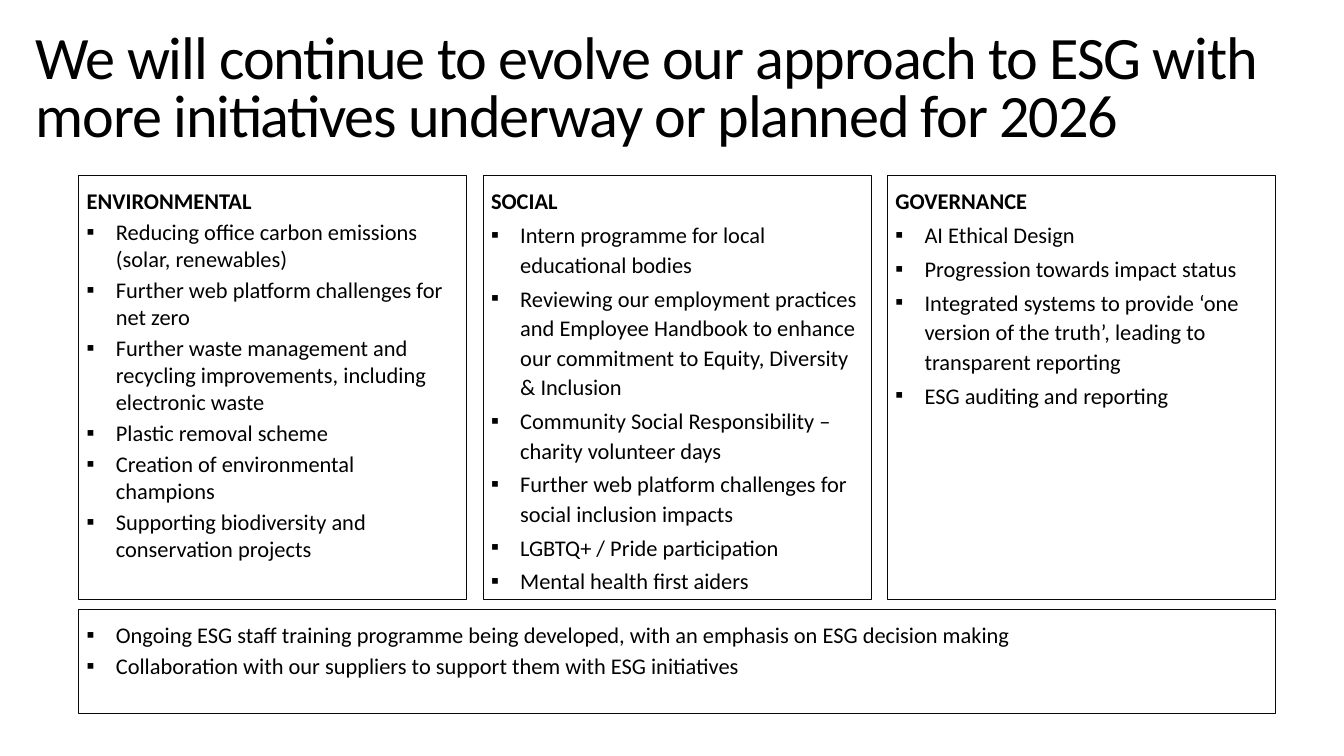
import pptx
import pptx.dml.color
import pptx.enum.shapes
import pptx.enum.text
import pptx.oxml
import pptx.oxml.ns
import pptx.util

Cm = pptx.util.Cm
Pt = pptx.util.Pt
RGBColor = pptx.dml.color.RGBColor

BLACK = RGBColor(0x00, 0x00, 0x00)
OUTLINE = RGBColor(0x08, 0x08, 0x08)
WHITE = RGBColor(0xFF, 0xFF, 0xFF)

SLIDE_WIDTH, SLIDE_HEIGHT = 67.74, 38.1
LEFT, COLUMN_TOP = 3.96, 8.84
COLUMN_WIDTH, COLUMN_HEIGHT, COLUMN_GAP = 19.56, 21.36, 0.82
FOOTER_TOP, FOOTER_HEIGHT = 30.71, 5.26

TITLE = ("We will continue to evolve our approach to ESG with "
         "more initiatives underway or planned for 2026")

COLUMNS = [
    ("ENVIRONMENTAL", None, [
        "Reducing office carbon emissions (solar, renewables)",
        "Further web platform challenges for net zero",
        "Further waste management and recycling improvements, including electronic waste",
        "Plastic removal scheme",
        "Creation of environmental champions",
        "Supporting biodiversity and conservation projects",
    ]),
    ("SOCIAL", 1.1, [
        "Intern programme for local educational bodies",
        "Reviewing our employment practices and Employee Handbook to enhance "
        "our commitment to Equity, Diversity & Inclusion",
        "Community Social Responsibility – charity volunteer days",
        "Further web platform challenges for social inclusion impacts",
        "LGBTQ+ / Pride participation",
        "Mental health first aiders",
    ]),
    ("GOVERNANCE", 1.1, [
        "AI Ethical Design",
        "Progression towards impact status",
        "Integrated systems to provide ‘one version of the truth’, "
        "leading to transparent reporting",
        "ESG auditing and reporting",
    ]),
]

SHARED_INITIATIVES = [
    "Ongoing ESG staff training programme being developed, "
    "with an emphasis on ESG decision making",
    "Collaboration with our suppliers to support them with ESG initiatives",
]


class SlideBuilder:
    font_name = "Calibri"
    title_size = 86
    body_size = 32
    indent = 1.47

    def __init__(self, slide):
        self.slide = slide

    def style_font(self, paragraph, size, bold=False):
        font = paragraph.font
        font.name = self.font_name
        font.size = Pt(size)
        font.bold = bold
        font.color.rgb = BLACK

    def set_frame(self, frame, left, top, right, bottom):
        frame.word_wrap = True
        frame.vertical_anchor = pptx.enum.text.MSO_ANCHOR.TOP
        frame.margin_left, frame.margin_top = Cm(left), Cm(top)
        frame.margin_right, frame.margin_bottom = Cm(right), Cm(bottom)

    def add_title(self, text, left, top, width, height):
        shape = self.slide.shapes.add_textbox(Cm(left), Cm(top), Cm(width), Cm(height))
        self.set_frame(shape.text_frame, 0, 0, 0, 0)
        paragraph = shape.text_frame.paragraphs[0]
        paragraph.text = text
        paragraph.line_spacing = Pt(81.7)
        self.style_font(paragraph, self.title_size)
        paragraph._p.get_or_add_pPr().get_or_add_defRPr().set("spc", "-170")

    def add_bullet(self, paragraph):
        properties = paragraph._p.get_or_add_pPr()
        properties.set("marL", str(Cm(self.indent)))
        properties.set("indent", str(-Cm(self.indent)))
        for tag, name, value in (("buFont", "typeface", self.font_name),
                                 ("buChar", "char", "▪")):
            element = pptx.oxml.parse_xml(f'<a:{tag} {pptx.oxml.ns.nsdecls("a")}/>')
            element.set(name, value)
            properties.append(element)

    def add_panel(self, left, top, width, height, items, heading=None, line_spacing=None):
        shape = self.slide.shapes.add_shape(
            pptx.enum.shapes.MSO_SHAPE.RECTANGLE, Cm(left), Cm(top), Cm(width), Cm(height))
        shape.shadow.inherit = False
        shape.fill.solid()
        shape.fill.fore_color.rgb = WHITE
        shape.line.color.rgb = OUTLINE
        shape.line.width = Pt(1)
        frame = shape.text_frame
        self.set_frame(frame, 0.41, 0.61, 0.41, 0.25)
        texts = [heading, *items] if heading else items
        for index, text in enumerate(texts):
            paragraph = frame.add_paragraph() if index else frame.paragraphs[0]
            paragraph.text = text
            paragraph.alignment = pptx.enum.text.PP_ALIGN.LEFT
            is_heading = text == heading
            if not is_heading:
                self.add_bullet(paragraph)
                paragraph.line_spacing = line_spacing
            if index:
                paragraph.space_before = Pt(6)
            self.style_font(paragraph, self.body_size, is_heading)


def main():
    presentation = pptx.Presentation()
    presentation.slide_width = Cm(SLIDE_WIDTH)
    presentation.slide_height = Cm(SLIDE_HEIGHT)
    slide = presentation.slides.add_slide(presentation.slide_layouts[6])
    builder = SlideBuilder(slide)

    builder.add_title(TITLE, 1.8, 1.75, 61.57, 1.93)
    for index, (heading, line_spacing, items) in enumerate(COLUMNS):
        left = LEFT + index * (COLUMN_WIDTH + COLUMN_GAP)
        builder.add_panel(left, COLUMN_TOP, COLUMN_WIDTH, COLUMN_HEIGHT,
                          items, heading, line_spacing)
    footer_width = 3 * COLUMN_WIDTH + 2 * COLUMN_GAP
    builder.add_panel(LEFT, FOOTER_TOP, footer_width, FOOTER_HEIGHT, SHARED_INITIATIVES)

    presentation.save("out.pptx")


if __name__ == "__main__":
    main()
